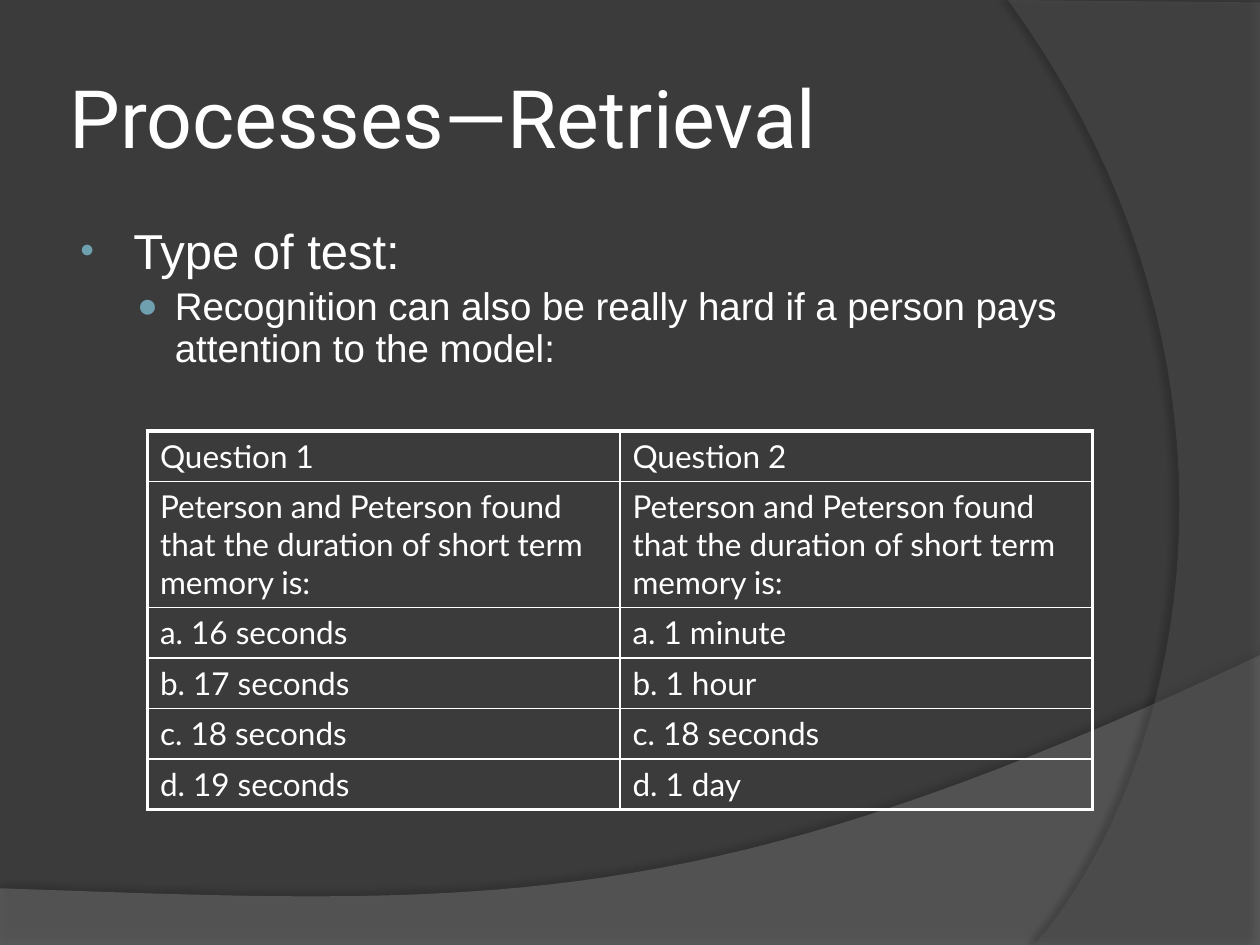
"""Builds the Processes—Retrieval slide."""
from lxml import etree
from pptx import Presentation
from pptx import util as u
from pptx.dml.color import RGBColor
from pptx.enum import text
from pptx.oxml import parse_xml
from pptx.oxml.ns import nsdecls, qn

COLORS = {"back": "3B3B3B", "wave": "7C7C7C", "arc": "595959",
          "text": "FFFFFF", "bullet": "6EA0B0", "shadow": "000000"}
QUESTION = "Peterson and Peterson found that the duration of short term memory is:"
ROWS = [("Question 1", "Question 2"),
        (QUESTION, QUESTION),
        ("a. 16 seconds", "a. 1 minute"),
        ("b. 17 seconds", "b. 1 hour"),
        ("c. 18 seconds", "c. 18 seconds"),
        ("d. 19 seconds", "d. 1 day")]
ROW_HEIGHTS = [0.4, 1, 0.4, 0.4, 0.4, 0.4]


def curve(p0, p1, p2, p3, steps=40):
    return [tuple((1 - t) ** 3 * a + 3 * (1 - t) ** 2 * t * b
                  + 3 * (1 - t) * t ** 2 * c + t ** 3 * d
                  for a, b, c, d in zip(p0, p1, p2, p3))
            for t in (i / steps for i in range(steps + 1))]


class Deck:
    def __init__(self):
        self.prs = Presentation()
        self.prs.slide_width, self.prs.slide_height = u.Inches(10), u.Inches(7.5)
        self.s = self.prs.slides.add_slide(self.prs.slide_layouts[5])
        fill = self.s.background.fill
        fill.solid()
        fill.fore_color.rgb = RGBColor.from_string(COLORS["back"])

    def run(self, p, words, size, font):
        r = p.add_run()
        r.text = words
        r.font.size, r.font.name = u.Pt(size), font
        r.font.color.rgb = RGBColor.from_string(COLORS["text"])

    def band(self, points, color, alpha, shade, distance, angle):
        pts = [(u.Inches(x), u.Inches(y)) for x, y in points]
        builder = self.s.shapes.build_freeform(*pts[0])
        builder.add_line_segments(pts[1:], close=True)
        sp = builder.convert_to_shape()
        sp.line.fill.background()
        sp.fill.solid()
        sp.fill.fore_color.rgb = RGBColor.from_string(COLORS[color])
        clr = next(sp.element.spPr.iter(qn("a:srgbClr")))
        etree.SubElement(clr, qn("a:alpha"), val=str(alpha * 1000))
        sp.element.spPr.append(parse_xml(
            f'<a:effectLst {nsdecls("a")}><a:outerShdw blurRad="{u.Pt(4)}" '
            f'dist="{u.Pt(distance)}" dir="{angle * 60000}" algn="ctr" rotWithShape="0">'
            f'<a:srgbClr val="{COLORS["shadow"]}"><a:alpha val="{shade * 1000}"/>'
            '</a:srgbClr></a:outerShdw></a:effectLst>'))

    def title(self, words, box):
        sp = self.s.shapes.title
        sp.left, sp.top, sp.width, sp.height = map(u.Inches, box)
        sp.element.getparent().append(sp.element)
        tf = sp.text_frame
        tf.margin_left = tf.margin_right = tf.margin_top = tf.margin_bottom = u.Inches(0.05)
        tf.vertical_anchor = text.MSO_ANCHOR.MIDDLE
        p = tf.paragraphs[0]
        p.alignment = text.PP_ALIGN.LEFT
        self.run(p, words, 46, "Roboto")

    def bullets(self, items, box):
        tf = self.s.shapes.add_textbox(*map(u.Inches, box)).text_frame
        tf.word_wrap = True
        for i, (words, size, margin, indent, mark, scale) in enumerate(items):
            p = tf.add_paragraph() if i else tf.paragraphs[0]
            p.level, p.line_spacing = i, 0.9
            p.space_before = u.Pt(0.2 * size if i else 0)
            pPr = p._p.get_or_add_pPr()
            pPr.set("marL", str(u.Inches(margin)))
            pPr.set("indent", str(u.Inches(indent)))
            clr = etree.SubElement(pPr, qn("a:buClr"))
            etree.SubElement(clr, qn("a:srgbClr"), val=COLORS["bullet"])
            etree.SubElement(pPr, qn("a:buSzPct"), val=str(scale * 1000))
            etree.SubElement(pPr, qn("a:buFont"), typeface="Arial")
            etree.SubElement(pPr, qn("a:buChar"), char=mark)
            self.run(p, words, size, "Arial")

    def border(self, cell, widths):
        tcPr = cell._tc.get_or_add_tcPr()
        for i, (side, width) in enumerate(zip("LRTB", widths)):
            tcPr.insert(i, parse_xml(
                f'<a:ln{side} {nsdecls("a")} w="{u.Pt(width)}"><a:solidFill>'
                f'<a:srgbClr val="{COLORS["text"]}"/></a:solidFill></a:ln{side}>'))

    def table(self, rows, heights, box):
        last_row, last_col = len(rows) - 1, len(rows[0]) - 1
        table = self.s.shapes.add_table(len(rows), len(rows[0]), *map(u.Inches, box)).table
        table.first_row = table.horz_banding = False
        for i, (row, height) in enumerate(zip(rows, heights)):
            table.rows[i].height = u.Inches(height)
            for j, words in enumerate(row):
                cell = table.cell(i, j)
                cell.fill.background()
                edges = (j == 0, j == last_col, i == 0, i == last_row)
                self.border(cell, [2.25 if edge else 1 for edge in edges])
                self.run(cell.text_frame.paragraphs[0], words, 18, "Lato")


def main():
    deck = Deck()
    wave = curve((10, 5.2), (5.59, 7.29), (3.91, 7.19), (0, 7.05))
    deck.band([(0, 7.5), (10, 7.5)] + wave, "wave", 45, 35, 3.5, 270)
    arc = curve((8.21, 7.5), (9.35, 6.19), (10.18, 3), (8, 0))
    deck.band([(10, 0.02), (10, 7.5)] + arc, "arc", 40, 45, 4, 180)
    deck.title("Processes—Retrieval", (0.5, 0.3, 8.17, 1.25))
    deck.bullets([
        ("Type of test:", 28, 0.46, -0.42, "•", 80),
        ("Recognition can also be really hard if a person pays attention to the model:",
         22, 0.79, -0.3, "●", 90),
    ], (0.5, 1.75, 8.17, 4.95))
    deck.table(ROWS, ROW_HEIGHTS, (1.17, 3.42, 7.5, 3))
    deck.prs.save("out.pptx")


if __name__ == "__main__":
    main()
